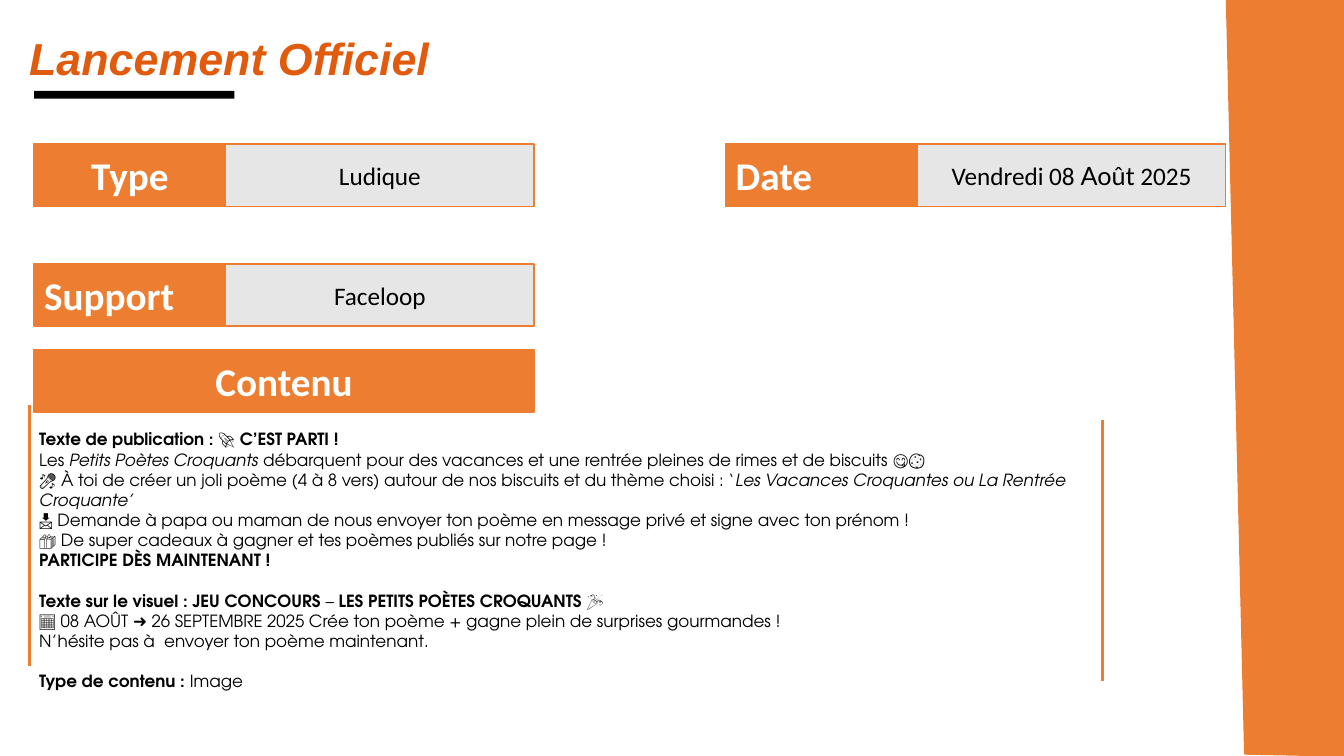
import pptx
import pptx.util
import pptx.dml.color
import pptx.enum.shapes
import pptx.enum.text
from lxml import etree

Cm, Pt = pptx.util.Cm, pptx.util.Pt
ALIGN = pptx.enum.text.PP_ALIGN
ANCHOR = pptx.enum.text.MSO_ANCHOR
FIT = pptx.enum.text.MSO_AUTO_SIZE
SHAPE = pptx.enum.shapes.MSO_SHAPE
LINE = pptx.enum.shapes.MSO_CONNECTOR

ORANGE, GREY, BLACK, WHITE = "ED7D31", "E7E6E6", "000000", "FFFFFF"
BOLD, ITALIC = {"bold": True}, {"italic": True}
GAP = 14.4  # height of one line of body text, in points


def color(code):
    return pptx.dml.color.RGBColor.from_string(code)


def write(para, text, font="Calibri", size=18, ink=BLACK, bold=False, italic=False):
    """Add text to a paragraph, with a line break at each newline."""
    for i, line in enumerate(text.split("\n")):
        if i:
            para.add_line_break()
        if line:
            run = para.add_run()
            run.text = line
            run.font.name, run.font.size = font, Pt(size)
            run.font.bold, run.font.italic = bold, italic
            run.font.color.rgb = color(ink)


class Page:
    def __init__(self, deck):
        self.slide = deck.slides.add_slide(deck.slide_layouts[5])
        self.shapes = self.slide.shapes

    def paint(self, shape, fill, edge=None):
        shape.shadow.inherit = False
        shape.fill.solid()
        shape.fill.fore_color.rgb = color(fill)
        if edge:
            shape.line.color.rgb = color(edge)
            shape.line.width = Pt(1)
        else:
            shape.line.fill.background()

    def title(self, text, *place):
        box = self.shapes.title
        box.left, box.top, box.width, box.height = map(Cm, place)
        frame = box.text_frame
        frame.auto_size = FIT.NONE
        frame.vertical_anchor = ANCHOR.TOP
        para = frame.paragraphs[0]
        para.alignment = ALIGN.JUSTIFY
        write(para, text, font="Arial", size=32, ink="E15B0F", bold=True, italic=True)

    def rect(self, place, fill, edge=None):
        box = self.shapes.add_shape(SHAPE.RECTANGLE, *map(Cm, place))
        self.paint(box, fill, edge)
        return box

    def cell(self, place, fill, parts, align=ALIGN.CENTER, **style):
        frame = self.rect(place, fill, ORANGE).text_frame
        frame.vertical_anchor = ANCHOR.MIDDLE
        para = frame.paragraphs[0]
        para.alignment = align
        for text, font in parts:
            write(para, text, font=font, **style)

    def label(self, text, place, align=ALIGN.CENTER):
        self.cell(place, ORANGE, [(text, "Calibri")], align, size=28, ink=WHITE, bold=True)

    def field(self, name, parts, left, top, align):
        """Draw an orange label with its grey value to the right."""
        self.label(name, (left, top, 4.83, 1.57), align)
        self.cell((left + 4.83, top, 7.77, 1.57), GREY, parts)

    def rule(self, x, top, end):
        line = self.shapes.add_connector(LINE.STRAIGHT, Cm(x), Cm(top), Cm(x), Cm(end))
        line.line.color.rgb = color(ORANGE)
        line.line.width = Pt(2.25)
        props = line._element.spPr
        etree.SubElement(props, pptx.oxml.ns.qn("a:effectLst"))

    def band(self, points):
        pts = [(Cm(x), Cm(y)) for x, y in points]
        form = self.shapes.build_freeform(*pts[0])
        form.add_line_segments(pts[1:], close=True)
        self.paint(form.convert_to_shape(), ORANGE, ORANGE)

    def body(self, place, paras):
        frame = self.shapes.add_textbox(*map(Cm, place)).text_frame
        frame.word_wrap = True
        frame.auto_size = FIT.SHAPE_TO_FIT_TEXT
        for i, (gap, runs) in enumerate(paras):
            para = frame.add_paragraph() if i else frame.paragraphs[0]
            para.space_before = Pt(gap)
            for text, style in runs:
                write(para, text, font="TeX Gyre Adventor", size=12, **style)


POST = [
    (0, [
        ("Texte de publication : ", BOLD), ("🚀 ", {}), ("C’EST PARTI !\n", BOLD),
        ("Les ", {}), ("Petits Poètes Croquants", ITALIC),
        (" débarquent pour des vacances et une rentrée pleines de rimes et de biscuits 😋🍪\n"
         "🎤 À toi de créer un joli poème (4 à 8 vers) autour de nos biscuits "
         "et du thème choisi : ‘", {}),
        ("Les Vacances Croquantes ou La Rentrée Croquante’", ITALIC),
    ]),
    (0, [
        ("📩 Demande à papa ou maman de nous envoyer ton poème en message privé "
         "et signe avec ton prénom !\n"
         "🎁 De super cadeaux à gagner et tes poèmes publiés sur notre page !", {}),
    ]),
    (0, [("PARTICIPE DÈS MAINTENANT !", BOLD)]),
    (GAP, [
        ("Texte sur le visuel : JEU CONCOURS", BOLD), (" – ", {}),
        ("LES PETITS POÈTES CROQUANTS 🎉", BOLD),
    ]),
    (0, [
        ("📅 ", BOLD),
        ("08 AOÛT ➜ 26 SEPTEMBRE 2025 Crée ton poème + gagne plein de surprises "
         "gourmandes !", {}),
    ]),
    (0, [("N’hésite pas à  envoyer ton poème maintenant.", {})]),
    (GAP, [("Type de contenu : ", BOLD), ("Image", {})]),
]


def main():
    deck = pptx.Presentation()
    deck.slide_width, deck.slide_height = Cm(33.87), Cm(19.05)
    page = Page(deck)
    page.band([(30.91, 0), (33.87, 0), (33.87, 19.05), (31.37, 19)])
    page.title("Lancement Officiel", 0.48, 0.64, 28.02, 1.32)
    page.rect((0.86, 2.29, 5.05, 0.2), BLACK)

    date = [("Vendredi 08 ", "Calibri"), ("Août", "Lato"), (" 2025", "Calibri")]
    page.field("Type", [("Ludique", "Calibri")], 0.86, 3.63, ALIGN.CENTER)
    page.field("Date", date, 18.29, 3.63, ALIGN.LEFT)
    page.field("Support", [("Faceloop", "Calibri")], 0.86, 6.65, ALIGN.LEFT)

    page.rule(0.74, 10.21, 16.79)
    page.label("Contenu", (0.86, 8.81, 12.6, 1.57))
    page.rule(27.79, 10.59, 17.17)
    page.body((0.74, 10.69, 27.28, 6.93), POST)
    deck.save("out.pptx")


if __name__ == "__main__":
    main()
